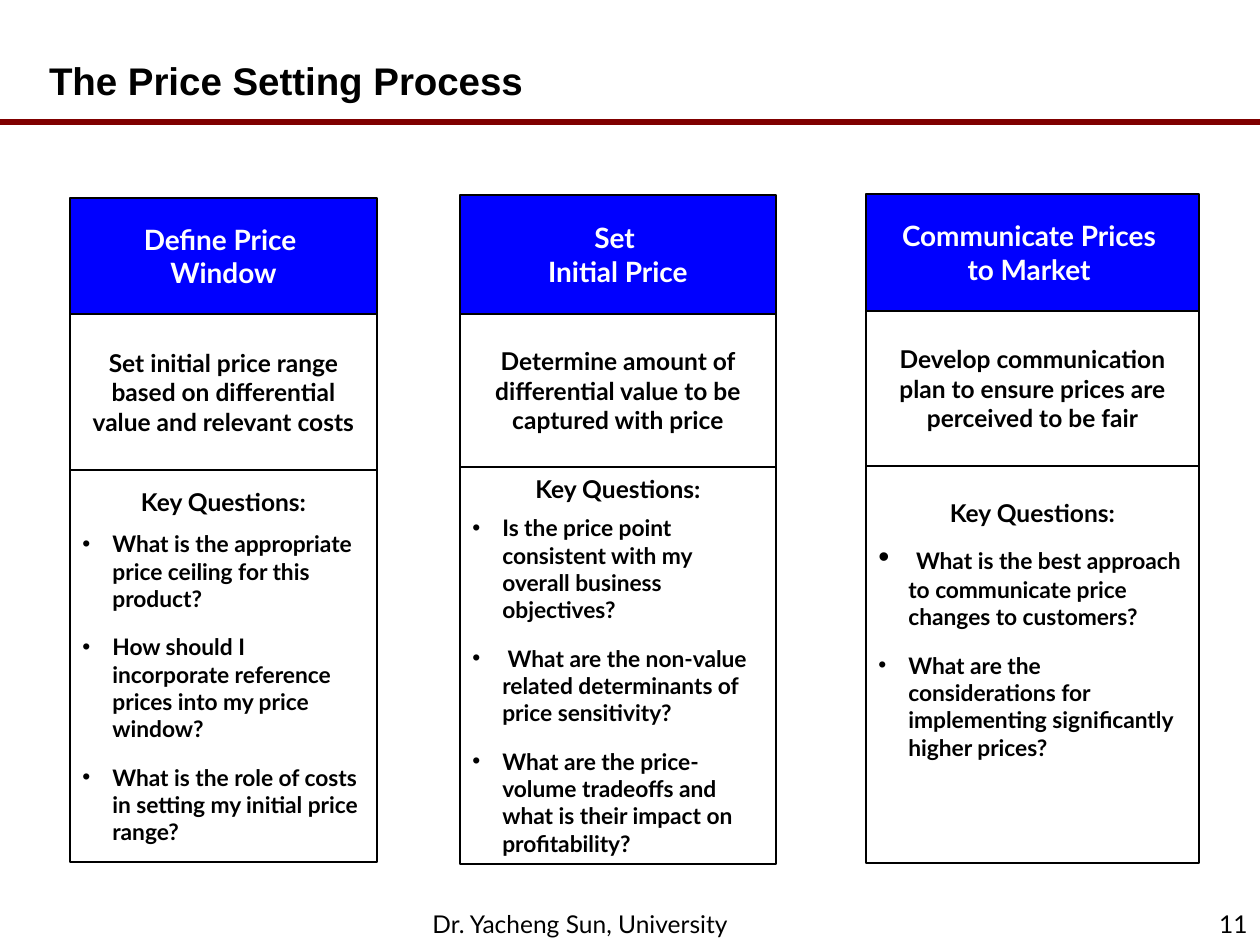
from lxml import etree
from pptx import Presentation
from pptx.dml.color import RGBColor
from pptx.enum.shapes import MSO_CONNECTOR, MSO_SHAPE
from pptx.enum.text import MSO_ANCHOR, PP_ALIGN
from pptx.oxml.ns import qn
from pptx.util import Emu, Pt

RECT = MSO_SHAPE.RECTANGLE
STRAIGHT = MSO_CONNECTOR.STRAIGHT
LEFT, CENTER, RIGHT = PP_ALIGN.LEFT, PP_ALIGN.CENTER, PP_ALIGN.RIGHT
TOP, MIDDLE, BOTTOM = MSO_ANCHOR.TOP, MSO_ANCHOR.MIDDLE, MSO_ANCHOR.BOTTOM

TITLE = "The Price Setting Process"
FOOTER = "Dr. Yacheng Sun, University"
PAGE = "11"
KEY = "Key Questions:"
COLUMNS = [
    {
        "x": 70, "w": 307, "edges": [198, 314, 470, 862],
        "head": ["Define Price ", "Window"],
        "goal": "Set initial price range based on differential value and relevant costs",
        "questions": [
            "What is the appropriate price ceiling for this product?",
            "How should I incorporate reference prices into my price window?",
            "What is the role of costs in setting my initial price range?",
        ],
        "key_gap": 8, "anchor": MIDDLE, "inset": 6, "lead": "",
    },
    {
        "x": 460, "w": 316, "edges": [195, 314, 467, 864],
        "head": ["Set ", "Initial Price"],
        "goal": "Determine amount of differential value to be captured with price",
        "questions": [
            "Is the price point consistent with my overall business objectives?",
            " What are the non-value related determinants of price sensitivity?",
            "What are the price-volume tradeoffs and what is their impact on profitability?",
        ],
        "key_gap": 6, "anchor": MIDDLE, "inset": 6, "lead": "",
    },
    {
        "x": 866, "w": 333, "edges": [194, 311, 466, 863],
        "head": ["Communicate Prices ", "to Market "],
        "goal": "Develop communication plan to ensure prices are perceived to be fair",
        "questions": [
            "What is the best approach to communicate price changes to customers?",
            "What are the considerations for implementing significantly higher prices?",
        ],
        "key_gap": 6, "anchor": TOP, "inset": 32, "lead": " ",
    },
]

TITLE_FONT = {"name": "Arial", "size": Pt(22), "bold": True}
HEAD_FONT = {"name": "Lato", "size": Pt(16), "bold": True}
GOAL_FONT = {"name": "Lato", "size": Pt(14), "bold": True}
ITEM_FONT = {"name": "Lato", "size": Pt(13), "bold": True}
LEAD_FONT = {"name": "Lato", "size": Pt(18), "bold": True}
FOOT_FONT = {"name": "Lato", "size": Pt(14), "bold": False}
HANG = 30
ITEM_GAP = 12


def px(n):
    return Emu(round(n * 914400 / 126))


def rgb(value):
    return RGBColor.from_string(value)


def set_all(obj, values):
    for name, value in values.items():
        setattr(obj, name, value)


def add_run(p, text, font, color="000000"):
    r = p.add_run()
    r.text = text
    set_all(r.font, font)
    r.font.color.rgb = rgb(color)


def add_par(tf, text, font, align=CENTER, color="000000"):
    p = tf.paragraphs[0]
    if p.runs:
        p = tf.add_paragraph()
    p.alignment = align
    add_run(p, text, font, color)
    return p


def add_bullet(p):
    pPr = p._p.get_or_add_pPr()
    pPr.set("marL", str(px(HANG)))
    pPr.set("indent", str(-px(HANG)))
    etree.SubElement(pPr, qn("a:buFont")).set("typeface", "Arial")
    etree.SubElement(pPr, qn("a:buChar")).set("char", "•")


def add_box(s, x, top, w, bottom, fill=None):
    sp = s.shapes.add_shape(RECT, px(x), px(top), px(w), px(bottom - top))
    sp.shadow.inherit = False
    if fill:
        sp.fill.solid()
        sp.fill.fore_color.rgb = rgb(fill)
    else:
        sp.fill.background()
    sp.line.color.rgb = rgb("000000")
    sp.line.width = Pt(0.75)
    set_all(sp.text_frame, {"word_wrap": True, "vertical_anchor": MIDDLE})
    return sp.text_frame


def add_text(s, box, text, font, align, anchor, **margins):
    tf = s.shapes.add_textbox(*map(px, box)).text_frame
    set_all(tf, {"word_wrap": True, "vertical_anchor": anchor, **margins})
    add_par(tf, text, font, align)


def add_column(s, col):
    x, w = col["x"], col["w"]
    top, goal_top, key_top, bottom = col["edges"]

    tf = add_box(s, x, top, w, goal_top, "0000FF")
    for line in col["head"]:
        add_par(tf, line, HEAD_FONT, color="FFFFFF")

    tf = add_box(s, x, goal_top, w, key_top)
    add_par(tf, col["goal"], GOAL_FONT)

    tf = add_box(s, x, key_top, w, bottom)
    set_all(tf, {"vertical_anchor": col["anchor"], "margin_top": px(col["inset"])})
    add_par(tf, KEY, GOAL_FONT)
    for i, question in enumerate(col["questions"]):
        if i == 0 and col["lead"]:
            p = add_par(tf, col["lead"], LEAD_FONT, LEFT)
            add_run(p, question, ITEM_FONT)
        else:
            p = add_par(tf, question, ITEM_FONT, LEFT)
        p.space_before = Pt(ITEM_GAP if i else col["key_gap"])
        add_bullet(p)


def main():
    prs = Presentation()
    set_all(prs, {"slide_width": px(1260), "slide_height": px(945)})
    s = prs.slides.add_slide(prs.slide_layouts[6])

    rule = s.shapes.add_connector(STRAIGHT, px(0), px(122), px(1260), px(122))
    rule.line.color.rgb = rgb("800000")
    rule.line.width = Pt(3)
    etree.SubElement(rule._element.spPr, qn("a:effectLst"))

    add_text(s, (43, 21, 1155, 82), TITLE, TITLE_FONT, LEFT, BOTTOM,
             margin_left=px(6), margin_right=px(6), margin_top=0, margin_bottom=0)
    for col in COLUMNS:
        add_column(s, col)
    add_text(s, (420, 903, 472, 42), FOOTER, FOOT_FONT, LEFT, TOP)
    add_text(s, (998, 882, 262, 63), PAGE, FOOT_FONT, RIGHT, BOTTOM)
    prs.save("out.pptx")


if __name__ == "__main__":
    main()
